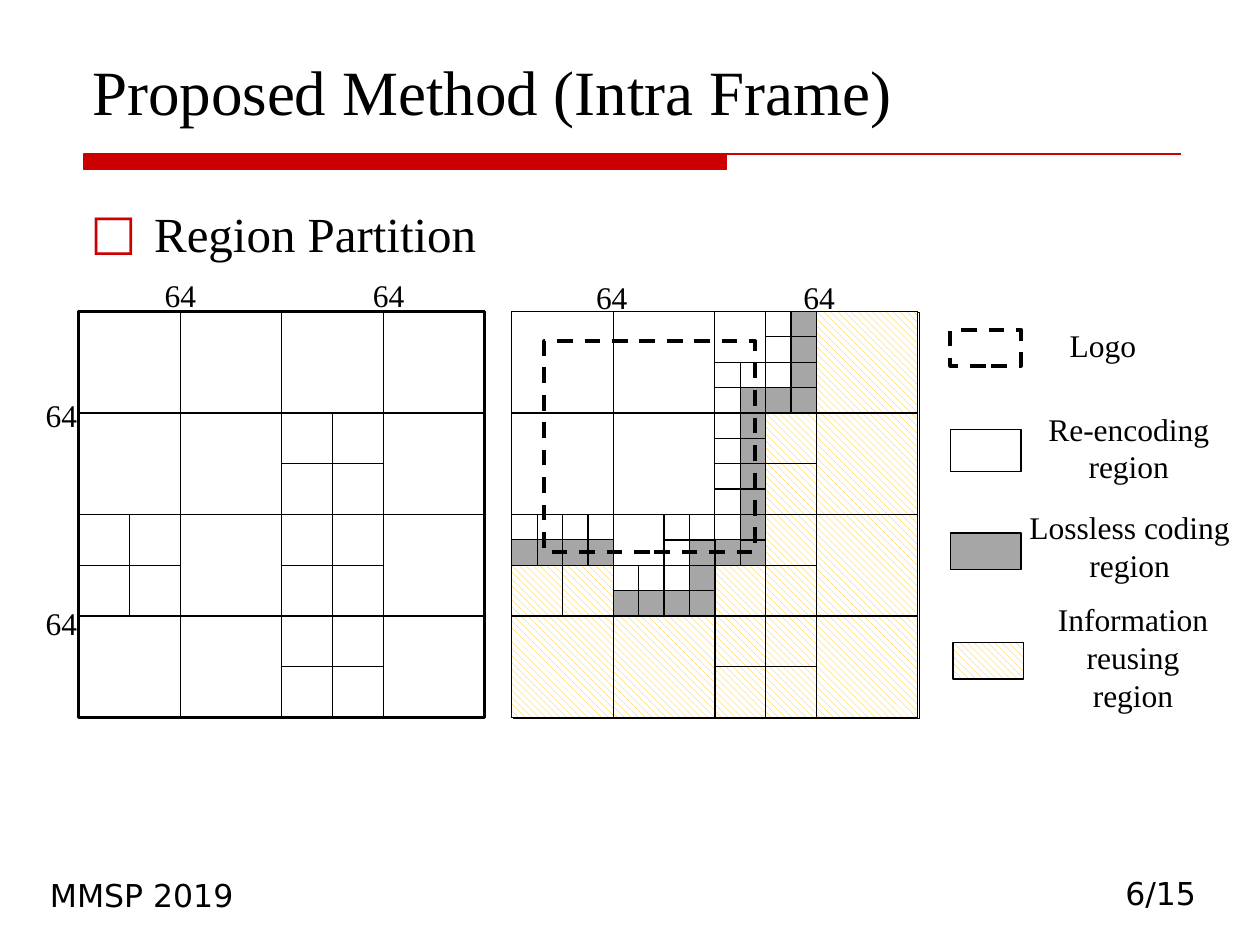
from lxml import etree
from pptx import Presentation
from pptx import util as u
from pptx.dml.color import RGBColor
from pptx.enum import dml, shapes, text
from pptx.oxml import ns

COLORS = {"ink": "000000", "paper": "FFFFFF", "accent": "CC0000", "lossless": "A6A6A6", "reuse": "FFC000"}
SERIF, SANS = "Times New Roman", "DejaVu Sans"
CELL = 14.5  # a 64-pixel unit spans eight cells
CENTER = text.PP_ALIGN.CENTER


def rgb(name):
    return RGBColor.from_string(COLORS[name])


class Painter:
    def __init__(self, slide):
        self.slide = slide
        self.thin, self.frame, self.thick = 0.75, 1.5, 2.25

    def paint(self, shape, fill):
        """Fill with a named colour; "reuse" is hatched and None is empty."""
        if fill is None:
            shape.fill.background()
        elif fill == "reuse":
            shape.fill.patterned()
            shape.fill.pattern = dml.MSO_PATTERN.WIDE_DOWNWARD_DIAGONAL
            shape.fill.fore_color.rgb = rgb("reuse")
            shape.fill.back_color.rgb = rgb("paper")
        else:
            shape.fill.solid()
            shape.fill.fore_color.rgb = rgb(fill)

    def stroke(self, shape, width, color="ink"):
        shape.line.color.rgb = rgb(color)
        shape.line.width = u.Pt(width)

    def rect(self, x, y, w, h, fill=None, width=None, dashed=False):
        shape = self.slide.shapes.add_shape(
            shapes.MSO_SHAPE.RECTANGLE, u.Pt(x), u.Pt(y), u.Pt(w), u.Pt(h))
        shape.shadow.inherit = False
        self.paint(shape, fill)
        self.stroke(shape, width or self.thin)
        if dashed:
            shape.line.dash_style = dml.MSO_LINE.DASH
        return shape

    def line(self, x1, y1, x2, y2):
        connector = self.slide.shapes.add_connector(
            shapes.MSO_CONNECTOR.STRAIGHT, u.Pt(x1), u.Pt(y1), u.Pt(x2), u.Pt(y2))
        self.stroke(connector, self.thin)
        etree.SubElement(connector._element.spPr, ns.qn("a:effectLst"))
        return connector

    def title_rule(self, x, y, bar_end, bar_bottom, end):
        """Thick bar that goes on as a thin line."""
        builder = self.slide.shapes.build_freeform(x, y, scale=float(u.Pt(1)))
        builder.add_line_segments([(bar_end, y), (bar_end, bar_bottom), (x, bar_bottom)], close=True)
        builder.move_to(x, y)
        builder.add_line_segments([(end, y)], close=False)
        shape = builder.convert_to_shape()
        shape.shadow.inherit = False
        self.paint(shape, "accent")
        self.stroke(shape, self.thin, "accent")

    def label(self, x, y, w, h, lines, size=18, name=SERIF, bullet=None, wrap=True,
              anchor=text.MSO_ANCHOR.TOP, **formats):
        box = self.slide.shapes.add_textbox(u.Pt(x), u.Pt(y), u.Pt(w), u.Pt(h))
        frame = box.text_frame
        frame.word_wrap, frame.vertical_anchor = wrap, anchor
        for index, words in enumerate(lines):
            para = frame.paragraphs[0] if index == 0 else frame.add_paragraph()
            for key, value in formats.items():
                setattr(para, key, value)
            if bullet:
                self.bullet(para, bullet)
            span = para.add_run()
            span.text = words
            for key, value in {"name": name, "size": u.Pt(size)}.items():
                setattr(span.font, key, value)
            span.font.color.rgb = rgb("ink")

    def bullet(self, para, char, indent=36.5):
        props = para._p.get_or_add_pPr()
        props.set("marL", str(u.Pt(indent)))
        props.set("indent", str(-u.Pt(indent)))
        color = etree.SubElement(props, ns.qn("a:buClr"))
        etree.SubElement(color, ns.qn("a:srgbClr"), val=COLORS["accent"])
        etree.SubElement(props, ns.qn("a:buFont"), typeface=SANS)
        etree.SubElement(props, ns.qn("a:buChar"), char=char)

    def partition(self, left, top, blocks, lines):
        """Draw (x, y, w, h, fill) blocks, then (x1, y1, x2, y2) lines, in cells."""
        sites = {}
        for x, y, w, h, fill in blocks:
            shape = self.rect(left + x * CELL, top + y * CELL, w * CELL, h * CELL, fill)
            middles = [(x + w / 2, y), (x, y + h / 2), (x + w / 2, y + h), (x + w, y + h / 2)]
            sites.update({point: (shape, site) for site, point in enumerate(middles)})
        for x1, y1, x2, y2 in lines:
            connector = self.line(left + x1 * CELL, top + y1 * CELL, left + x2 * CELL, top + y2 * CELL)
            if (x1, y1) in sites:
                connector.begin_connect(*sites[x1, y1])
            if (x2, y2) in sites:
                connector.end_connect(*sites[x2, y2])


def filled(fill, blocks):
    return [(*block, fill) for block in blocks]


CODED_BLOCKS = filled("paper", [
    (4, 12, 4, 4), (4, 8, 4, 4), (0, 10, 4, 6), (8, 10, 2, 6), (10, 4, 2, 12),
    (12, 0, 4, 16), (8, 0, 4, 4), (8, 4, 2, 6), (0, 8, 4, 2),
]) + filled(None, [(8, 0, 8, 8)])
SHARED_LINES = [(0, 12, 16, 12), (0, 4, 16, 4), (8, 6, 12, 6), (8, 10, 12, 10),
                (2, 8, 2, 12), (8, 14, 12, 14)]
CODED_LINES = SHARED_LINES + [(4, 0, 4, 8)]

REGION_BLOCKS = filled("paper", [(0, 0, 16, 16)]) + filled("lossless", [
    (7, 9, 1, 3), (4, 11, 4, 1), (9, 3, 3, 1), (11, 0, 1, 4), (8, 9, 2, 1),
    (9, 4, 1, 6), (0, 9, 4, 1),
]) + filled("reuse", [
    (0, 10, 4, 6), (8, 10, 2, 6), (10, 4, 2, 12), (12, 0, 4, 16), (4, 12, 4, 4),
]) + filled(None, [(0, 8, 8, 8), (8, 0, 8, 8)])
REGION_LINES = SHARED_LINES + [
    (12, 0, 12, 16), (4, 0, 4, 16), (0, 10, 8, 10), (3, 8, 3, 10), (1, 8, 1, 10),
    (6, 8, 6, 12), (5, 10, 5, 12), (8, 7, 10, 7), (8, 5, 10, 5), (8, 2, 12, 2),
    (10, 1, 12, 1), (10, 0, 10, 4), (7, 11, 7, 12), (9, 9, 10, 9), (11, 3, 12, 3),
    (6, 9, 8, 9), (7, 8, 7, 9), (8, 3, 9, 3), (9, 2, 9, 4),
]


def main():
    deck = Presentation()
    deck.slide_width, deck.slide_height = u.Pt(720), u.Pt(540)
    page = Painter(deck.slides.add_slide(deck.slide_layouts[6]))

    page.title_rule(48, 88.5, 415, 97, 675)
    page.label(45.5, 24, 630, 53, ["Proposed Method (Intra Frame)"], size=36,
               anchor=text.MSO_ANCHOR.BOTTOM)
    page.label(44.5, 106, 630, 79, ["Region Partition"], size=28, bullet="□", line_spacing=1.2)

    left, right, top, side = 45, 292.5, 178, 16 * CELL
    page.partition(left, top, CODED_BLOCKS, CODED_LINES)
    page.rect(left, top, side, side, width=page.frame)
    page.rect(right + 1, top + 0.5, side, side)
    page.partition(right, top, REGION_BLOCKS, REGION_LINES)
    page.rect(311, 195, 120.5, 120.5, width=page.thick, dashed=True)

    for x, y in [(87, 154), (206, 154), (19, 222.5), (19, 341.5), (333.5, 155.5), (452, 155.5)]:
        page.label(x, y, 35, 29, ["64"])

    page.rect(543, 188.5, 40.5, 20.5, width=page.thick, dashed=True)
    for x, y, h, fill in [(543, 245.5, 24, None), (543, 304.5, 21, "lossless"),
                          (544.5, 367, 21, "reuse")]:
        page.rect(x, y, 40.5, h, fill)
    for x, y, w, h, lines in [
        (589.5, 183, 81.5, 29, ["Logo"]),
        (584.5, 230.5, 121, 51, ["Re-encoding", "region"]),
        (578, 287, 135, 51, ["Lossless coding", "region"]),
        (589.5, 339.5, 116, 73, ["Information reusing", "region"]),
    ]:
        page.label(x, y, w, h, lines, alignment=CENTER)

    page.label(636, 496, 77, 29, ["6/15"], name=SANS, wrap=False)
    page.label(20, 497, 122, 29, ["MMSP 2019"], name=SANS, wrap=False, alignment=CENTER)
    deck.save("out.pptx")


if __name__ == "__main__":
    main()
